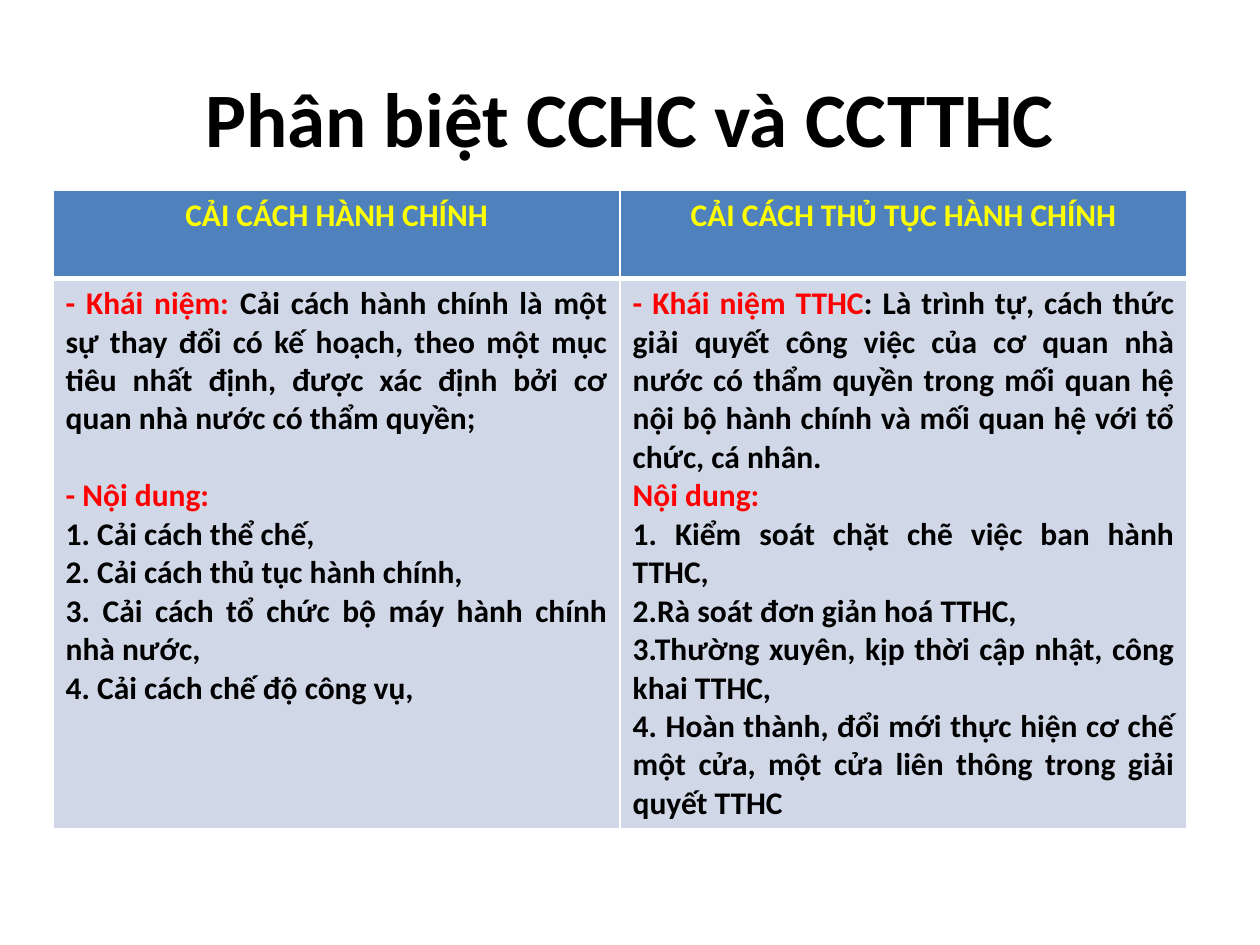
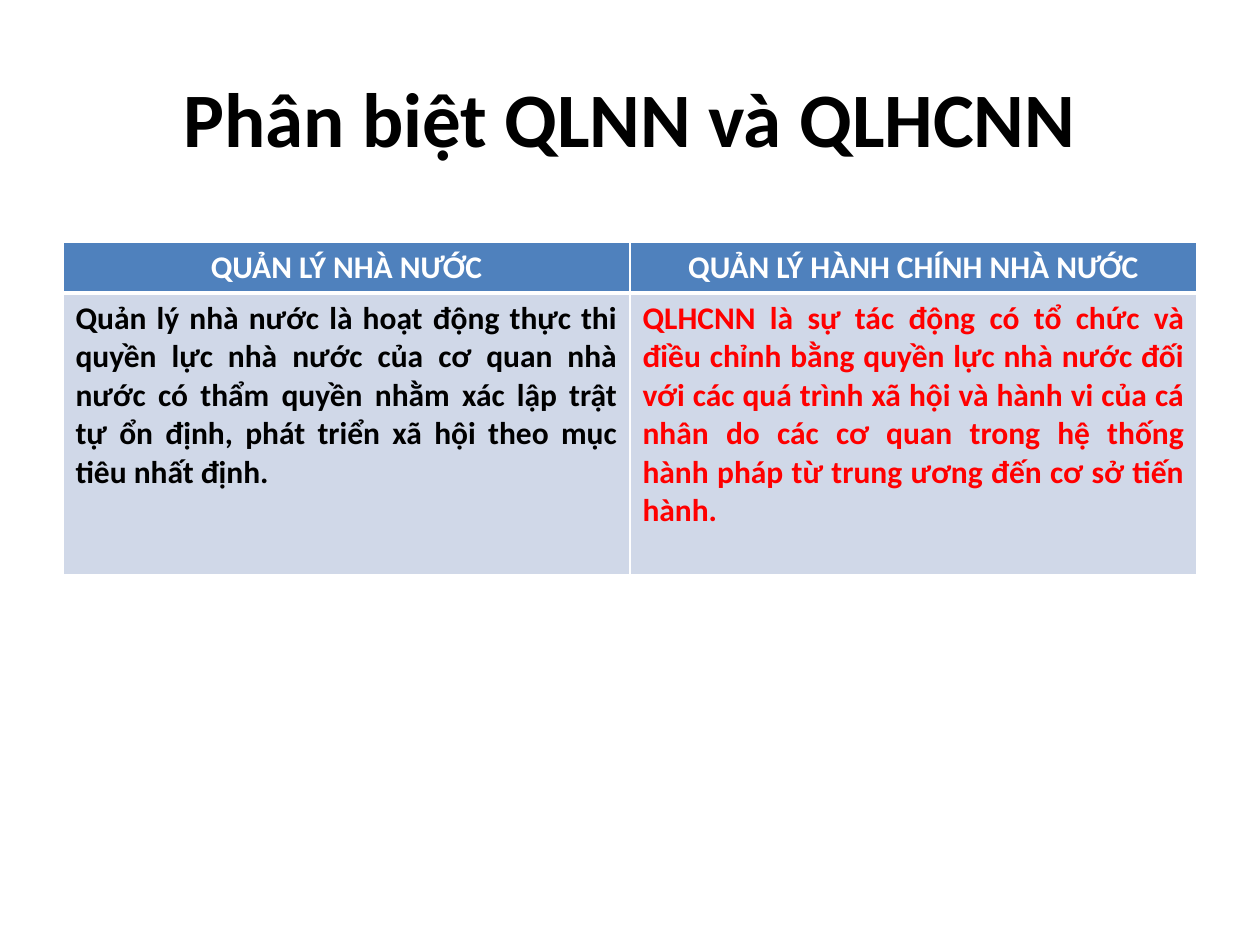
from lxml import etree
from pptx import Presentation
from pptx import util as u
from pptx.dml.color import RGBColor
from pptx.enum import text
from pptx.oxml import ns

FONT = "Calibri"
BLACK, WHITE, RED, YELLOW = "000000", "FFFFFF", "FF0000", "FFFF00"
HEADER_FILL, BODY_FILL = "4F81BD", "D0D8E8"
COLUMN_WIDTH = 11.43
LINE_HEIGHT = 22  # one line of body text, in points


def colour(value):
    return RGBColor.from_string(value)


class Slides:
    """Holds the shared style and the current slide."""

    def __init__(self):
        self.deck = Presentation()
        self.deck.slide_width = u.Cm(25.4)
        self.deck.slide_height = u.Cm(19.05)
        self.page = None

    def add_page(self, title):
        self.page = self.deck.slides.add_slide(self.deck.slide_layouts[5])
        box = self.page.shapes.title
        box.left, box.top = u.Cm(1.27), u.Cm(0.76)
        box.width, box.height = u.Cm(22.86), u.Cm(3.18)
        box.text_frame.vertical_anchor = text.MSO_ANCHOR.MIDDLE
        self.add_spans(box.text_frame.paragraphs[0], [(title, BLACK)], 44,
                       text.PP_ALIGN.CENTER)

    def add_spans(self, para, spans, size, align):
        para.alignment = align
        for words, tint in spans:
            span = para.add_run()
            span.text = words
            span.font.name = FONT
            span.font.size = u.Pt(size)
            span.font.bold = True
            span.font.color.rgb = colour(tint)

    def add_borders(self, cell, top, bottom):
        properties = cell._tc.get_or_add_tcPr()
        sides = (("lnL", 1), ("lnR", 1), ("lnT", top), ("lnB", bottom))
        for place, (side, points) in enumerate(sides):
            line = etree.Element(ns.qn("a:" + side), w=str(u.Pt(points)))
            fill = etree.SubElement(line, ns.qn("a:solidFill"))
            etree.SubElement(fill, ns.qn("a:srgbClr"), val=WHITE)
            properties.insert(place, line)

    def fill_cell(self, cell, paragraphs, align, fill, top, bottom):
        cell.fill.solid()
        cell.fill.fore_color.rgb = colour(fill)
        self.add_borders(cell, top, bottom)
        frame = cell.text_frame
        for number, spans in enumerate(paragraphs):
            para = frame.add_paragraph() if number else frame.paragraphs[0]
            self.add_spans(para, spans, 18, align)

    def add_comparison(self, left, top, row_heights, header_tint, columns):
        """Two-row table; columns holds (heading, body paragraphs) pairs."""
        table = self.page.shapes.add_table(
            2, len(columns), u.Cm(left), u.Cm(top),
            u.Cm(COLUMN_WIDTH * len(columns)), u.Cm(sum(row_heights))).table
        table.horz_banding = False
        for row, height in zip(table.rows, row_heights):
            row.height = u.Cm(height)
        for index, (heading, body) in enumerate(columns):
            table.columns[index].width = u.Cm(COLUMN_WIDTH)
            self.fill_cell(table.cell(0, index), [[(heading, header_tint)]],
                           text.PP_ALIGN.CENTER, HEADER_FILL, 1, 3)
            self.fill_cell(table.cell(1, index), body,
                           text.PP_ALIGN.JUSTIFY, BODY_FILL, 3, 1)
        return table


def plain(*lines):
    return [[(line, BLACK)] for line in lines]


def main():
    slides = Slides()

    # Administrative reform and reform of procedures
    slides.add_page("Phân biệt CCHC và CCTTHC")
    reform = [
        [("- Khái niệm: ", RED),
         ("Cải cách hành chính là một sự thay đổi có kế hoạch, theo một mục "
          "tiêu nhất định, được xác định bởi cơ quan nhà nước có thẩm quyền;",
          BLACK)],
        [("- Nội dung: ", RED)],
        *plain("1. Cải cách thể chế,",
               "2. Cải cách thủ tục hành chính,",
               "3. Cải cách tổ chức bộ máy hành chính nhà nước, ",
               "4. Cải cách chế độ công vụ, "),
    ]
    procedures = [
        [("- Khái niệm TTHC", RED),
         (": Là trình tự, cách thức giải quyết công việc của cơ quan nhà nước "
          "có thẩm quyền trong mối quan hệ nội bộ hành chính và mối quan hệ "
          "với tổ chức, cá nhân.", BLACK)],
        [("Nội dung:", RED)],
        *plain("1. Kiểm soát chặt chẽ việc ban hành TTHC,",
               "2.Rà soát đơn giản hoá TTHC,",
               "3.Thường xuyên, kịp thời cập nhật, công khai TTHC,",
               "4. Hoàn thành, đổi mới thực hiện cơ chế một cửa, một cửa liên "
               "thông trong giải quyết TTHC"),
    ]
    table = slides.add_comparison(
        1.07, 3.83, (1.78, 11.1), YELLOW,
        [("CẢI CÁCH HÀNH CHÍNH", reform),
         ("CẢI CÁCH THỦ TỤC HÀNH CHÍNH", procedures)])
    contents = table.cell(1, 0).text_frame.paragraphs[1]
    contents.space_before = u.Pt(LINE_HEIGHT)

    # State management and state administrative management
    slides.add_page("Phân biệt QLNN và QLHCNN")
    state = plain(
        "Quản lý nhà nước là hoạt động thực thi quyền lực nhà nước của cơ quan "
        "nhà nước có thẩm quyền nhằm xác lập trật tự ổn định, phát triển xã "
        "hội theo mục tiêu nhất định.")
    administration = [[(
        "QLHCNN là sự tác động có tổ chức và điều chỉnh bằng quyền lực nhà "
        "nước đối với các quá trình xã hội và hành vi của cá nhân do các cơ "
        "quan trong hệ thống hành pháp từ trung ương đến cơ sở tiến hành.",
        RED)]]
    slides.add_comparison(
        1.27, 4.88, (1.02, 5.68), WHITE,
        [("QUẢN LÝ NHÀ NƯỚC", state),
         ("QUẢN LÝ HÀNH CHÍNH NHÀ NƯỚC", administration)])

    slides.deck.save("out.pptx")


if __name__ == "__main__":
    main()
